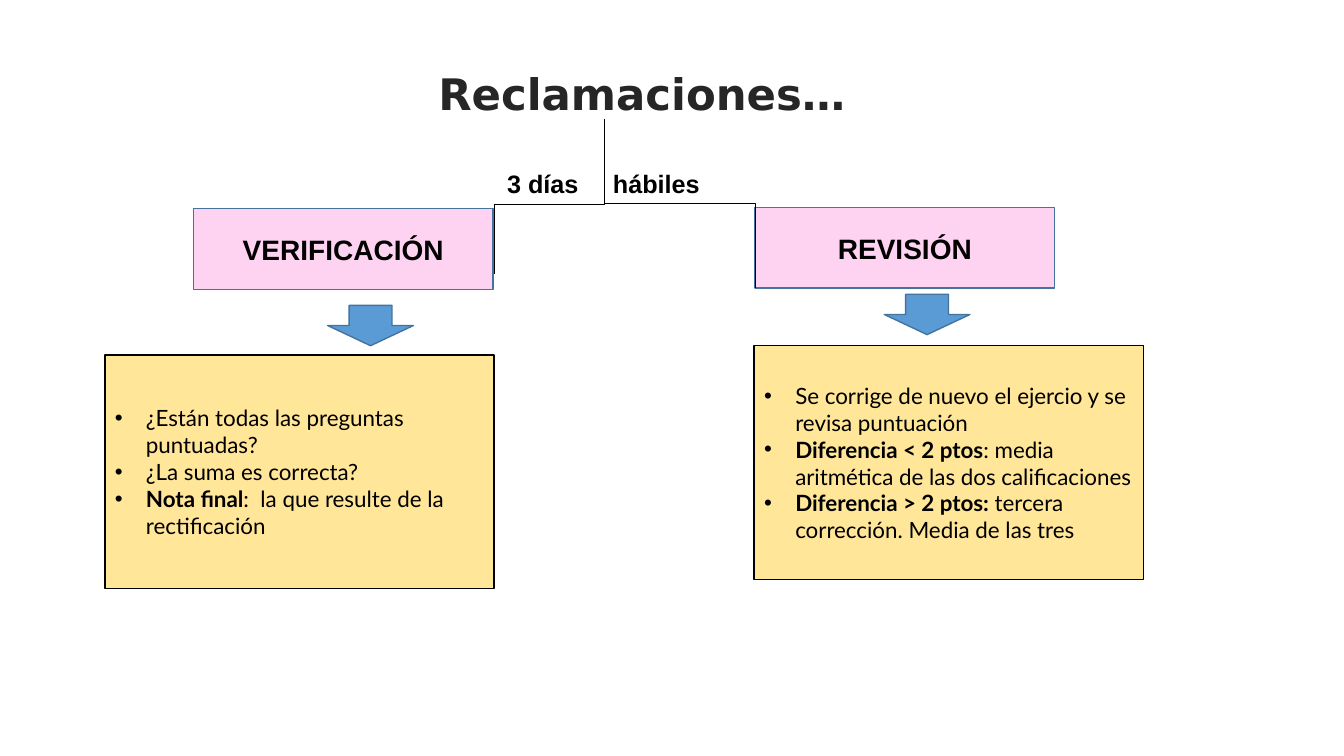
from lxml import etree
from pptx import Presentation
from pptx import util as u
from pptx.dml.color import RGBColor
from pptx.enum import shapes, text
from pptx.oxml.ns import qn

COLORS = {"title": "262626", "text": "000000", "pink": "FED2F1", "yellow": "FFE699",
          "blue": "5B9BD5", "edge": "43739E"}


def rgb(name):
    return RGBColor.from_string(COLORS[name])


def write(p, runs, font, size, color="text"):
    """Fill a paragraph with (text, bold) runs."""
    for words, bold in runs:
        r = p.add_run()
        r.text = words
        for key, value in {"name": font, "size": u.Pt(size), "bold": bold}.items():
            setattr(r.font, key, value)
        r.font.color.rgb = rgb(color)


prs = Presentation()
prs.slide_width, prs.slide_height = u.Inches(13.33), u.Inches(7.5)
s = prs.slides.add_slide(prs.slide_layouts[5])

# Title
title = s.shapes.title
title.left, title.top = u.Inches(1.38), u.Inches(0.62)
title.width, title.height = u.Inches(9.97), u.Inches(0.8)
tf = title.text_frame
tf.auto_size = text.MSO_AUTO_SIZE.NONE
tf.vertical_anchor = text.MSO_ANCHOR.TOP
p = tf.paragraphs[0]
p.alignment, p.line_spacing = text.PP_ALIGN.CENTER, 1.0
write(p, [("Reclamaciones…", True)], "DejaVu Sans", 31, "title")

# Two branches: heading, arrow and explanation
RECT, ARROW = shapes.MSO_SHAPE.RECTANGLE, shapes.MSO_SHAPE.DOWN_ARROW
branches = [
    ("VERIFICACIÓN", (1.92, 2.07), (3.25, 3.03), (1.04, 3.52), [
        [("¿Están todas las preguntas puntuadas?", False)],
        [("¿La suma es correcta?", False)],
        [("Nota final", True), (":  la que resulte de la rectificación", False)],
    ]),
    ("REVISIÓN", (7.49, 2.06), (8.77, 2.92), (7.48, 3.43), [
        [("Se corrige de nuevo el ejercio y se revisa puntuación", False)],
        [("Diferencia < 2 ptos", True), (": media aritmética de las dos calificaciones", False)],
        [("Diferencia > 2 ptos: ", True), ("tercera corrección. Media de las tres", False)],
    ]),
]
for heading, heading_at, arrow_at, body_at, points in branches:
    parts = []
    for kind, at, size, fill, edge in [
        (RECT, heading_at, (2.97, 0.8), "pink", "edge"),
        (ARROW, arrow_at, (0.85, 0.4), "blue", "edge"),
        (RECT, body_at, (3.86, 2.32), "yellow", "text"),
    ]:
        sp = s.shapes.add_shape(kind, *(u.Inches(v) for v in at + size))
        sp.shadow.inherit = False
        sp.fill.solid()
        sp.fill.fore_color.rgb = rgb(fill)
        sp.line.color.rgb = rgb(edge)
        sp.line.width = u.Pt(1)
        sp.text_frame.word_wrap = True
        sp.text_frame.vertical_anchor = text.MSO_ANCHOR.MIDDLE
        parts.append(sp)

    p = parts[0].text_frame.paragraphs[0]
    p.alignment = text.PP_ALIGN.CENTER
    write(p, [(heading, True)], "Arial", 20)

    tf = parts[2].text_frame
    for i, runs in enumerate(points):
        p = tf.add_paragraph() if i else tf.paragraphs[0]
        p.alignment = text.PP_ALIGN.LEFT
        pPr = p._p.get_or_add_pPr()
        pPr.set("marL", str(u.Inches(0.31)))
        pPr.set("indent", str(u.Inches(-0.31)))
        etree.SubElement(pPr, qn("a:buFont"), typeface="Arial")
        etree.SubElement(pPr, qn("a:buChar"), char="•")
        write(p, runs, "Lato", 16)

# Elbow connectors, turned so that they leave the title downwards
for left, top, width, height, degrees, flip in [
    (5.9, 1.27, 1.68, 1.5, 270, "1"),
    (4.76, 1.48, 1.38, 1.09, 90, "0"),
]:
    c = s.shapes.add_connector(shapes.MSO_CONNECTOR.ELBOW, u.Inches(left), u.Inches(top),
                               u.Inches(left + width), u.Inches(top + height))
    c.line.color.rgb = rgb("text")
    c.line.width = u.Pt(0.5)
    spPr = c._element.spPr
    xfrm = spPr.find(qn("a:xfrm"))
    xfrm.set("rot", str(degrees * 60000))
    xfrm.set("flipH", flip)
    etree.SubElement(spPr, qn("a:effectLst"))

# Deadline, split around the vertical line by a tab stop
deadline = s.shapes.add_textbox(u.Inches(4.5), u.Inches(1.42), u.Inches(2.97), u.Inches(0.8))
tf = deadline.text_frame
tf.word_wrap = True
tf.vertical_anchor = text.MSO_ANCHOR.MIDDLE
tf.margin_left = u.Inches(0.53)
p = tf.paragraphs[0]
tabs = etree.SubElement(p._p.get_or_add_pPr(), qn("a:tabLst"))
etree.SubElement(tabs, qn("a:tab"), pos=str(u.Inches(1.05)), algn="l")
write(p, [("3 días\thábiles", True)], "Arial", 18)

prs.save("out.pptx")
